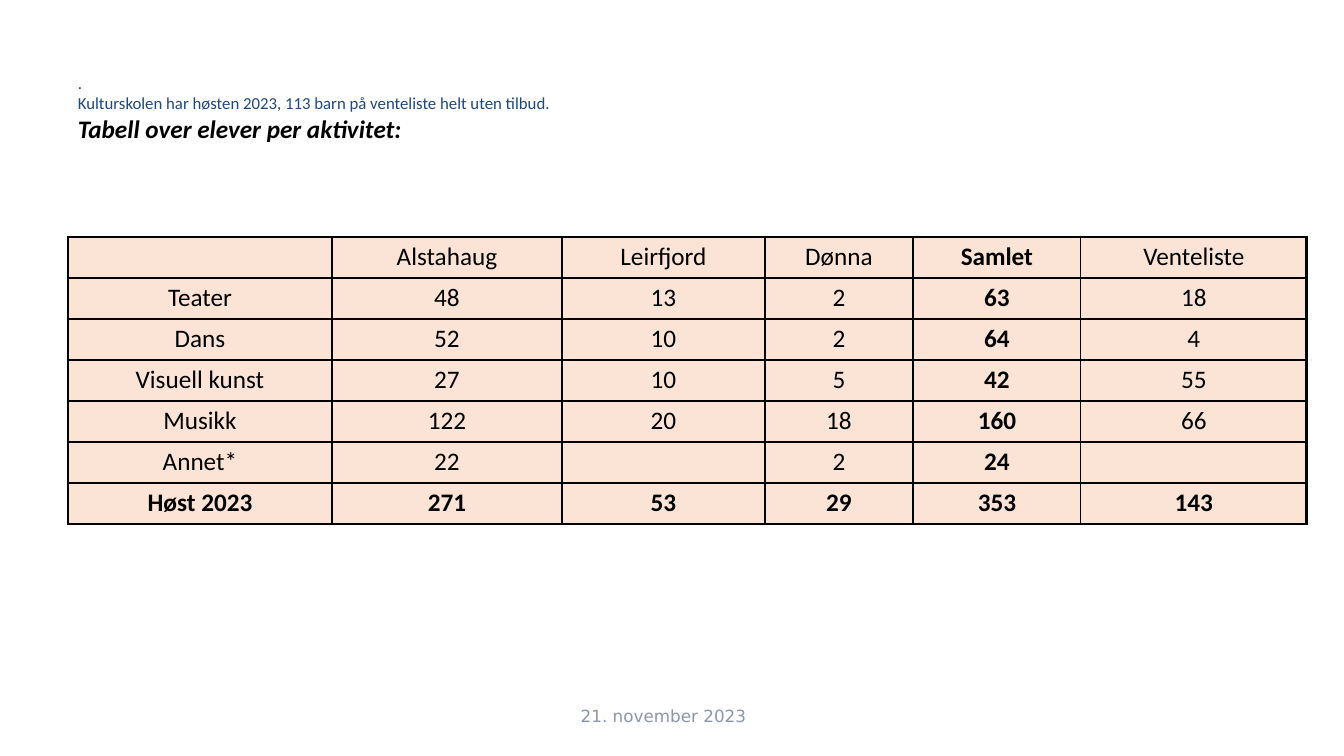
from lxml.etree import SubElement
from pptx import Presentation
from pptx.dml.color import RGBColor
from pptx.enum.text import MSO_ANCHOR, PP_ALIGN
from pptx.oxml.ns import qn
from pptx.util import Pt

EMU_PER_PX = 914400 / 100.8
BLACK, BLUE, GREY, PEACH = "000000", "1F497D", "8D95AA", "FBE4D5"
THIN, THICK = Pt(1), Pt(2.25)

COLUMN_WIDTHS = [264, 230, 203, 148, 168, 226]
ROW_HEIGHT = 41
PUPILS = [
    ["", "Alstahaug", "Leirfjord", "Dønna", "Samlet", "Venteliste"],
    ["Teater", "48", "13", "2", "63", "18"],
    ["Dans", "52", "10", "2", "64", "4"],
    ["Visuell kunst", "27", "10", "5", "42", "55"],
    ["Musikk", "122", "20", "18", "160", "66"],
    ["Annet*", "22", "", "2", "24", ""],
    ["Høst 2023", "271", "53", "29", "353", "143"],
]
TOTAL_COLUMN = PUPILS[0].index("Samlet")


def px(length):
    return round(length * EMU_PER_PX)


def color(hex_code):
    return RGBColor.from_string(hex_code)


class SlideBuilder:
    font_name = "Calibri"

    def __init__(self, slide):
        self.slide = slide

    def style(self, paragraph, size, hex_code=BLACK, bold=False, italic=False,
              font_name=None, align=PP_ALIGN.LEFT):
        paragraph.alignment = align
        font = paragraph.font
        if paragraph.runs:
            font = paragraph.runs[0].font
        font.name = font_name or self.font_name
        font.size = Pt(size)
        font.bold = bold
        font.italic = italic
        font.color.rgb = color(hex_code)

    def text(self, left, top, width, height, lines, anchor=MSO_ANCHOR.TOP):
        """Add a text box; lines holds pairs of wording and style options."""
        box = self.slide.shapes.add_textbox(px(left), px(top), px(width), px(height))
        frame = box.text_frame
        frame.word_wrap = True
        frame.vertical_anchor = anchor
        frame.text = "\n".join(wording for wording, _ in lines)
        for paragraph, (_, options) in zip(frame.paragraphs, lines):
            self.style(paragraph, **options)

    def borders(self, cell, widths):
        """Draw the left, right, top and bottom borders, which precede the fill."""
        properties = cell._tc.get_or_add_tcPr()
        for index, (side, width) in enumerate(zip("LRTB", widths)):
            line = SubElement(properties, qn(f"a:ln{side}"), w=str(width))
            fill = SubElement(line, qn("a:solidFill"))
            SubElement(fill, qn("a:srgbClr"), val=BLACK)
            properties.insert(index, line)

    def table(self, left, top, rows, column_widths, row_height):
        last_row, last_column = len(rows) - 1, len(column_widths) - 1
        table = self.slide.shapes.add_table(
            len(rows), len(column_widths), px(left), px(top),
            px(sum(column_widths)), px(row_height * len(rows))).table
        for column, width in zip(table.columns, column_widths):
            column.width = px(width)
        for r, values in enumerate(rows):
            table.rows[r].height = px(row_height)
            for c, value in enumerate(values):
                cell = table.cell(r, c)
                cell.text = value
                cell.margin_left = cell.margin_right = px(7)
                cell.margin_top = cell.margin_bottom = px(5)
                cell.fill.solid()
                cell.fill.fore_color.rgb = color(PEACH)
                self.style(cell.text_frame.paragraphs[0], 18, align=PP_ALIGN.CENTER,
                           bold=r == last_row or c == TOTAL_COLUMN)
                outer = (c == 0, c == last_column, r == 0, r == last_row)
                self.borders(cell, [THICK if edge else THIN for edge in outer])


def main():
    presentation = Presentation()
    presentation.slide_width, presentation.slide_height = px(1344), px(756)
    builder = SlideBuilder(presentation.slides.add_slide(presentation.slide_layouts[6]))
    builder.text(507, 696, 313, 40, [
        ("21. november 2023", dict(size=12, hex_code=GREY, font_name="DejaVu Sans",
                                   align=PP_ALIGN.CENTER)),
    ], anchor=MSO_ANCHOR.MIDDLE)
    builder.table(68, 237, PUPILS, COLUMN_WIDTHS, ROW_HEIGHT)
    builder.text(68, 68, 1240, 82, [
        (".", dict(size=12, hex_code=BLUE)),
        ("Kulturskolen har høsten 2023, 113 barn på venteliste helt uten tilbud.",
         dict(size=12, hex_code=BLUE)),
        ("Tabell over elever per aktivitet:", dict(size=18, bold=True, italic=True)),
    ])
    presentation.save("out.pptx")


if __name__ == "__main__":
    main()
